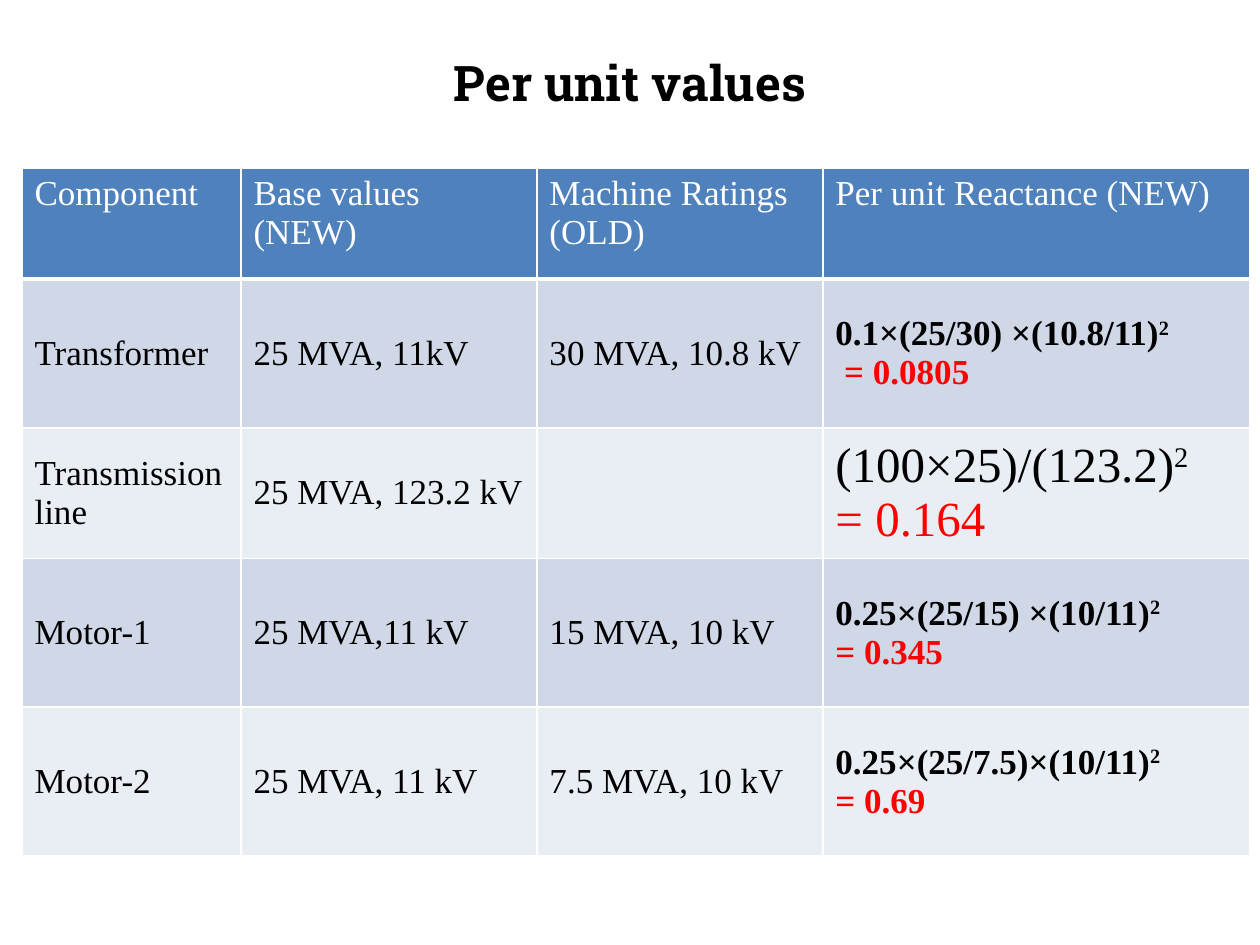
import pptx
import pptx.util
import pptx.dml.color
import pptx.enum.text
import lxml.etree

RGB = pptx.dml.color.RGBColor
WHITE = RGB(0xFF, 0xFF, 0xFF)
BLACK = RGB(0, 0, 0)
RED = RGB(0xFF, 0, 0)
BLUE = RGB(0x4F, 0x81, 0xBD)
DARK = RGB(0xD0, 0xD8, 0xE8)
LIGHT = RGB(0xE9, 0xED, 0xF4)

PX = 914400 // 126
NS = "http://schemas.openxmlformats.org/drawingml/2006/main"
MID = pptx.enum.text.MSO_ANCHOR.MIDDLE

COLS = [219, 296, 286, 427]
ROWS = [111, 149, 111, 149, 149]
HEAD = ["Component", "Base values (NEW)", "Machine Ratings (OLD)",
        "Per unit Reactance (NEW)"]
# Name, base, rating, formula to be squared, result, formula size, bold
BODY = [
    ("Transformer", "25 MVA, 11kV", "30 MVA, 10.8 kV",
     "0.1×(25/30) ×(10.8/11)", " = 0.0805", 20, True),
    ("Transmission line", "25 MVA, 123.2 kV", "",
     "(100×25)/(123.2)", "= 0.164", 28, False),
    ("Motor-1", "25 MVA,11 kV", "15 MVA, 10 kV",
     "0.25×(25/15) ×(10/11)", "= 0.345", 20, True),
    ("Motor-2", "25 MVA, 11 kV", "7.5 MVA, 10 kV",
     "0.25×(25/7.5)×(10/11)", "= 0.69", 20, True),
]


def write(para, text, size=20, font="Times New Roman", color=BLACK,
          bold=False, base=0):
    """Add a run of text; base is a raise in percent."""
    run = para.add_run()
    run.text = text
    run.font.size = pptx.util.Pt(size)
    run.font.name = font
    run.font.bold = bold
    run.font.color.rgb = color
    if base:
        run._r.get_or_add_rPr().set("baseline", str(base * 1000))


def style(cell, fill, under=1):
    """Give a cell white borders and a plain fill."""
    props = cell._tc.get_or_add_tcPr()
    for side, width in (("L", 1), ("R", 1), ("T", 1), ("B", under)):
        line = lxml.etree.SubElement(props, f"{{{NS}}}ln{side}",
                                     w=str(pptx.util.Pt(width)))
        solid = lxml.etree.SubElement(line, f"{{{NS}}}solidFill")
        lxml.etree.SubElement(solid, f"{{{NS}}}srgbClr", val=str(WHITE))
    cell.fill.solid()
    cell.fill.fore_color.rgb = fill


def title(slide, left, top, width, height):
    box = slide.shapes.add_textbox(left * PX, top * PX, width * PX, height * PX)
    frame = box.text_frame
    frame.word_wrap = True
    frame.vertical_anchor = MID
    para = frame.paragraphs[0]
    para.alignment = pptx.enum.text.PP_ALIGN.CENTER
    write(para, "Per unit values", size=28, font="Roboto Slab", bold=True)


def grid(slide, left, top, width, height):
    table = slide.shapes.add_table(len(ROWS), len(COLS), left * PX, top * PX,
                                   width * PX, height * PX).table
    for col, size in zip(table.columns, COLS):
        col.width = size * PX
    for row, size in zip(table.rows, ROWS):
        row.height = size * PX

    # Header row
    for cell, text in zip(table.rows[0].cells, HEAD):
        style(cell, BLUE, under=3)
        write(cell.text_frame.paragraphs[0], text, color=WHITE)

    # Banded rows, each with its formula and result last
    for num, (*texts, calc, result, size, bold) in enumerate(BODY):
        cells = list(table.rows[num + 1].cells)
        for cell in cells:
            style(cell, LIGHT if num % 2 else DARK)
            cell.vertical_anchor = MID
        for cell, text in zip(cells, texts):
            if text:
                write(cell.text_frame.paragraphs[0], text)
        frame = cells[-1].text_frame
        para = frame.paragraphs[0]
        write(para, calc, size=size, bold=bold)
        write(para, "2", size=size, bold=bold, base=30)
        write(frame.add_paragraph(), result, size=size, bold=bold, color=RED)


def main():
    deck = pptx.Presentation()
    deck.slide_width = 1260 * PX
    deck.slide_height = 945 * PX
    slide = deck.slides.add_slide(deck.slide_layouts[6])
    title(slide, 63, 38, 1134, 88)
    grid(slide, 22, 168, sum(COLS), sum(ROWS))
    deck.save("out.pptx")


if __name__ == "__main__":
    main()
